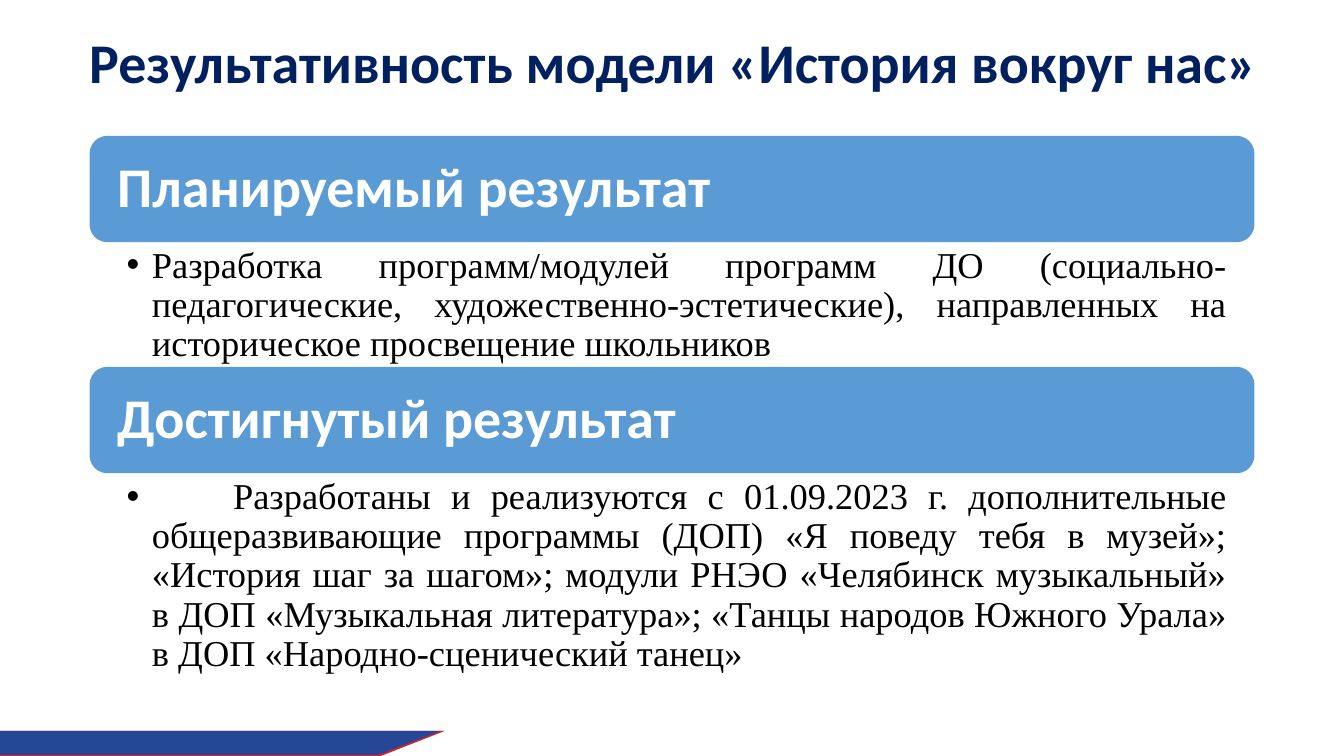
from lxml import etree
from pptx import Presentation
from pptx import util as u
from pptx.dml.color import RGBColor
from pptx.enum import shapes, text
from pptx.oxml.ns import qn

THEME = {
    "navy": RGBColor.from_string("002060"),
    "blue": RGBColor.from_string("5B9BD5"),
    "red": RGBColor.from_string("E31E24"),
    "stripe": RGBColor.from_string("264796"),
    "white": RGBColor.from_string("FFFFFF"),
    "black": RGBColor.from_string("000000"),
    "heading": u.Pt(40),
    "body": u.Pt(26),
}
HEADING = {"name": "Calibri", "size": THEME["heading"], "bold": True}
BODY = {"name": "Times New Roman", "size": THEME["body"], "bold": False}


def paint(shape, color):
    shape.shadow.inherit = False
    shape.fill.solid()
    shape.fill.fore_color.rgb = color
    shape.line.fill.background()


def write(box, words, font, color, align, anchor, insets):
    frame = box.text_frame
    left, top, right, bottom = (u.Pt(inset) for inset in insets)
    settings = {
        "word_wrap": True, "auto_size": text.MSO_AUTO_SIZE.NONE,
        "vertical_anchor": anchor, "margin_left": left, "margin_top": top,
        "margin_right": right, "margin_bottom": bottom,
    }
    for key, value in settings.items():
        setattr(frame, key, value)
    para = frame.paragraphs[0]
    para.alignment = align
    para.line_spacing = 0.9
    para.space_before = u.Pt(0)
    span = para.add_run()
    span.text = words
    for key, value in font.items():
        setattr(span.font, key, value)
    span.font.color.rgb = color
    return para


deck = Presentation()
deck.slide_width, deck.slide_height = u.Pt(960), u.Pt(540)
page = deck.slides.add_slide(deck.slide_layouts[5])

for color, right, slant, bottom in [("red", 318, 46, 540), ("stripe", 315.5, 45.5, 539.3)]:
    builder = page.shapes.build_freeform(u.Pt(0), u.Pt(522))
    builder.add_line_segments([
        (u.Pt(right), u.Pt(522)),
        (u.Pt(right - slant), u.Pt(bottom)),
        (u.Pt(0), u.Pt(bottom)),
    ])
    paint(builder.convert_to_shape(), THEME[color])

title = page.shapes.title
place = {"left": 56.4, "top": 10, "width": 893, "height": 73.5}
for key, value in place.items():
    setattr(title, key, u.Pt(value))
write(title, "Результативность модели «История вокруг нас»", HEADING,
      THEME["navy"], text.PP_ALIGN.LEFT, text.MSO_ANCHOR.MIDDLE, (7.2, 3.6, 7.2, 3.6))

LEFT, WIDTH, BAR = 64, 832, 76
results = [
    (97, 89, "Планируемый результат",
     "Разработка программ/модулей программ ДО (социально-педагогические, "
     "художественно-эстетические), направленных на историческое просвещение школьников"),
    (262, 178, "Достигнутый результат",
     "\tРазработаны и реализуются с 01.09.2023 г. дополнительные общеразвивающие "
     "программы (ДОП) «Я поведу тебя в музей»; «История шаг за шагом»; модули РНЭО "
     "«Челябинск музыкальный» в ДОП «Музыкальная литература»; «Танцы народов Южного "
     "Урала» в ДОП «Народно-сценический танец»"),
]
for top, height, heading, details in results:
    bar = page.shapes.add_shape(shapes.MSO_SHAPE.ROUNDED_RECTANGLE,
                                u.Pt(LEFT), u.Pt(top), u.Pt(WIDTH), u.Pt(BAR))
    paint(bar, THEME["blue"])
    write(bar, heading, HEADING, THEME["white"], text.PP_ALIGN.LEFT,
          text.MSO_ANCHOR.MIDDLE, (16, 12, 16, 12))

    box = page.shapes.add_textbox(u.Pt(LEFT), u.Pt(top + BAR), u.Pt(WIDTH), u.Pt(height))
    para = write(box, details, BODY, THEME["black"], text.PP_ALIGN.JUSTIFY,
                 text.MSO_ANCHOR.TOP, (26.5, 3.4, 19, 3.4))
    props = para._p.get_or_add_pPr()
    props.set("marL", str(u.Pt(18)))
    props.set("indent", str(u.Pt(-18)))
    etree.SubElement(props, qn("a:buFont"), typeface="Arial")
    etree.SubElement(props, qn("a:buChar"), char="•")
    if details.startswith("\t"):
        tabs = etree.SubElement(props, qn("a:tabLst"))
        etree.SubElement(tabs, qn("a:tab"), pos=str(u.Pt(76)), algn="l")

deck.save("out.pptx")
